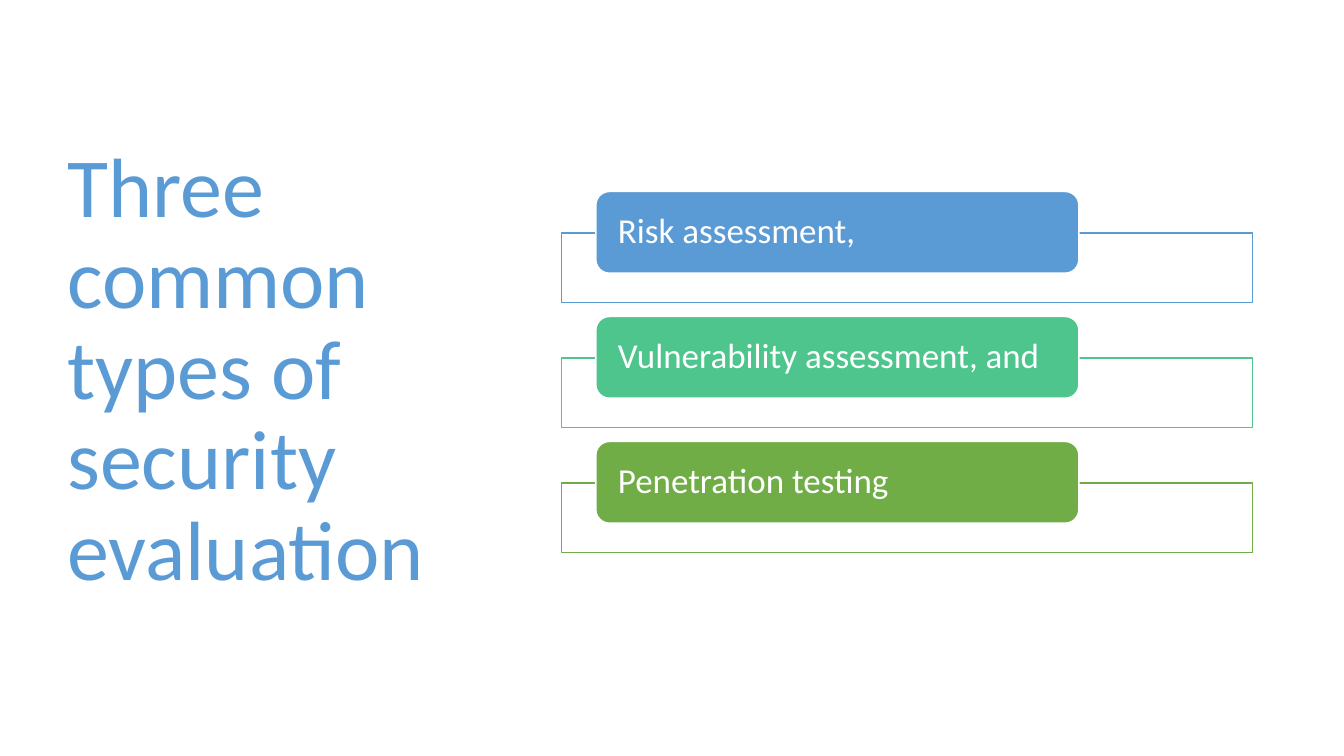
from pptx import Presentation
from pptx.dml.color import RGBColor as Rgb
from pptx.enum.shapes import MSO_SHAPE as Shape
from pptx.enum.text import MSO_ANCHOR as Anchor, PP_ALIGN as Align
from pptx.util import Pt

PX = 9144  # 100 px to the inch
THEME = {
    "font": "Calibri",
    "white": "FFFFFF",
    "blue": "5B9BD5",
    "mint": "4DC58D",
    "green": "70AD47",
    "title": 60,
    "item": 25,
}


def write(shape, text, size, color, inset):
    """Put left-aligned, vertically centred text into a shape."""
    frame = shape.text_frame
    frame.word_wrap = True
    frame.vertical_anchor = Anchor.MIDDLE
    frame.margin_left = frame.margin_right = inset * PX
    frame.text = text
    para = frame.paragraphs[0]
    para.alignment = Align.LEFT
    para.line_spacing = 0.9
    font = para.runs[0].font
    font.name = THEME["font"]
    font.size = Pt(THEME[size])
    font.color.rgb = Rgb.from_string(THEME[color])


def block(kind, box, fill, line):
    shape = slide.shapes.add_shape(kind, *[n * PX for n in box])
    shape.shadow.inherit = False
    shape.fill.solid()
    shape.fill.fore_color.rgb = Rgb.from_string(THEME[fill])
    shape.line.color.rgb = Rgb.from_string(THEME[line])
    shape.line.width = Pt(1)
    return shape


deck = Presentation()
deck.slide_width = 1333 * PX
deck.slide_height = 750 * PX
slide = deck.slides.add_slide(deck.slide_layouts[6])

title = slide.shapes.add_textbox(57 * PX, 68 * PX, 416 * PX, 602 * PX)
write(title, "Three common types of security evaluation", "title", "blue", 10)

items = [
    ("Risk assessment,", "blue"),
    ("Vulnerability assessment, and", "mint"),
    ("Penetration testing", "green"),
]
for row, (text, color) in enumerate(items):
    top = 190 + row * 124
    block(Shape.RECTANGLE, (557, top + 41, 685, 69), "white", color)
    label = block(Shape.ROUNDED_RECTANGLE, (591, top, 479, 81), color, "white")
    write(label, text, "item", "white", 18)

deck.save("out.pptx")
